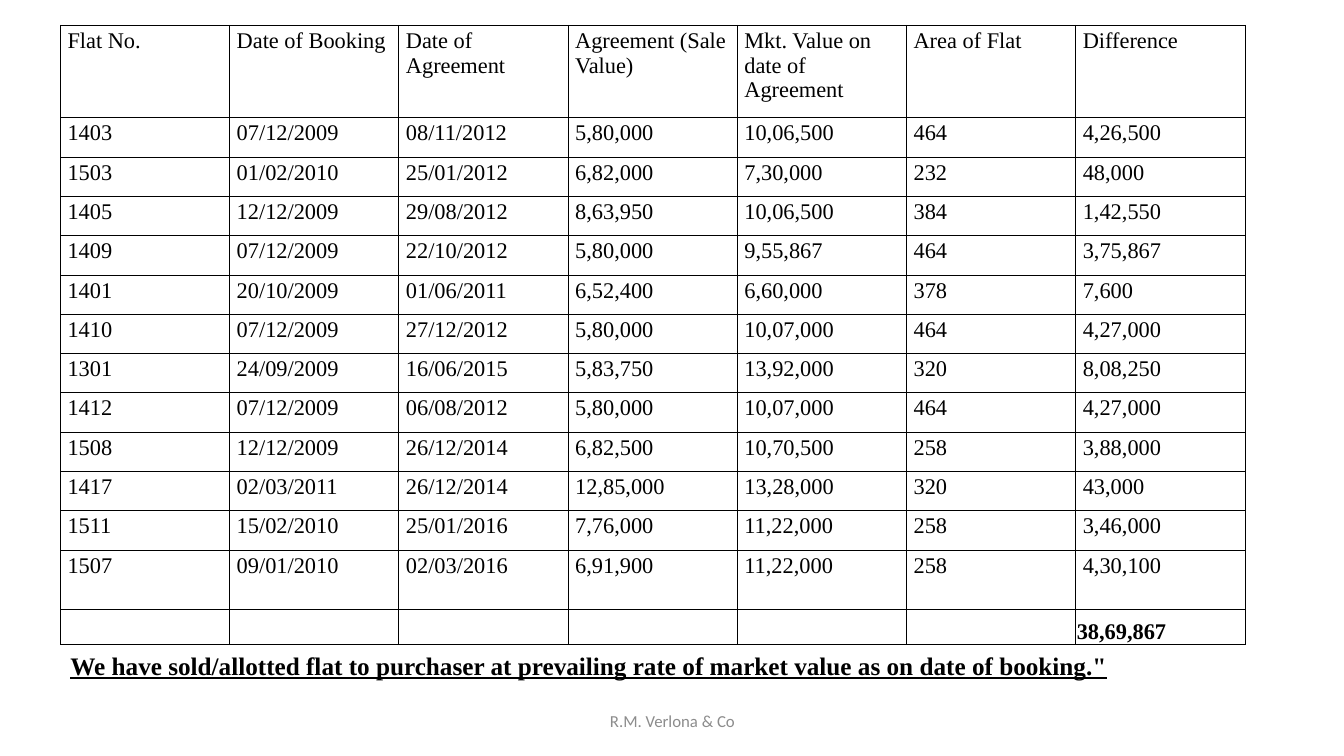
"""Build the slide listing flat sales, their market values and the differences."""
from dataclasses import dataclass

import pptx
import pptx.dml.color
import pptx.enum.text
import pptx.oxml
import pptx.oxml.ns
import pptx.util
from pptx.util import Inches


@dataclass(frozen=True)
class Theme:
    ink: str = "000000"
    paper: str = "FFFFFF"
    muted: str = "8C8C8C"
    body_font: str = "Times New Roman"
    footer_font: str = "Calibri"
    table_size: int = 16
    remark_size: int = 18
    footer_size: int = 12
    border_width: float = 0.75


theme = Theme()


def style(paragraph, face, size, color, bold=False, underline=False):
    """Set the font of a whole paragraph."""
    font = paragraph.font
    font.name, font.size = face, pptx.util.Pt(size)
    font.bold, font.underline = bold, underline
    font.color.rgb = pptx.dml.color.RGBColor.from_string(color)


def add_borders(cell):
    """Draw a thin line on all four sides of a cell."""
    width = int(pptx.util.Pt(theme.border_width))
    for side in ("lnL", "lnR", "lnT", "lnB"):
        cell._tc.get_or_add_tcPr().append(pptx.oxml.parse_xml(
            f'<a:{side} {pptx.oxml.ns.nsdecls("a")} w="{width}"><a:solidFill>'
            f'<a:srgbClr val="{theme.ink}"/></a:solidFill></a:{side}>'))


sales = [
    ["Flat No.", "Date of Booking", "Date of Agreement", "Agreement (Sale Value)",
     "Mkt. Value on date of Agreement", "Area of Flat", "Difference"],
    ["1403", "07/12/2009", "08/11/2012", "5,80,000", "10,06,500", "464", "4,26,500"],
    ["1503", "01/02/2010", "25/01/2012", "6,82,000", "7,30,000", "232", "48,000"],
    ["1405", "12/12/2009", "29/08/2012", "8,63,950", "10,06,500", "384", "1,42,550"],
    ["1409", "07/12/2009", "22/10/2012", "5,80,000", "9,55,867", "464", "3,75,867"],
    ["1401", "20/10/2009", "01/06/2011", "6,52,400", "6,60,000", "378", "7,600"],
    ["1410", "07/12/2009", "27/12/2012", "5,80,000", "10,07,000", "464", "4,27,000"],
    ["1301", "24/09/2009", "16/06/2015", "5,83,750", "13,92,000", "320", "8,08,250"],
    ["1412", "07/12/2009", "06/08/2012", "5,80,000", "10,07,000", "464", "4,27,000"],
    ["1508", "12/12/2009", "26/12/2014", "6,82,500", "10,70,500", "258", "3,88,000"],
    ["1417", "02/03/2011", "26/12/2014", "12,85,000", "13,28,000", "320", "43,000"],
    ["1511", "15/02/2010", "25/01/2016", "7,76,000", "11,22,000", "258", "3,46,000"],
    ["1507", "09/01/2010", "02/03/2016", "6,91,900", "11,22,000", "258", "4,30,100"],
    ["", "", "", "", "", "", "38,69,867"],
]
row_heights = [0.92] + [0.39] * 11 + [0.59, 0.35]
total_row = len(sales) - 1

deck = pptx.Presentation()
deck.slide_width, deck.slide_height = Inches(13.33), Inches(7.5)
slide = deck.slides.add_slide(deck.slide_layouts[6])

register = slide.shapes.add_table(
    len(sales), len(sales[0]),
    Inches(0.6), Inches(0.25), Inches(11.75), Inches(6.15)).table
register.first_row = register.horz_banding = False

for row, (entries, height) in enumerate(zip(sales, row_heights)):
    register.rows[row].height = Inches(height)
    is_total = row == total_row
    for column, entry in enumerate(entries):
        cell = register.cell(row, column)
        add_borders(cell)
        cell.fill.solid()
        cell.fill.fore_color.rgb = pptx.dml.color.RGBColor.from_string(theme.paper)
        cell.margin_left = cell.margin_right = Inches(0.01 if is_total else 0.07)
        cell.margin_top = Inches(0.01 if is_total else 0.03)
        cell.margin_bottom = Inches(0 if is_total else 0.03)
        if is_total:
            cell.vertical_anchor = pptx.enum.text.MSO_ANCHOR.BOTTOM
        cell.text = entry
        style(cell.text_frame.paragraphs[0], theme.body_font, theme.table_size,
              theme.ink, bold=is_total)

remark = slide.shapes.add_textbox(
    Inches(0.6), Inches(6.4), Inches(11.55), Inches(0.4)).text_frame
remark.word_wrap = True
remark.auto_size = pptx.enum.text.MSO_AUTO_SIZE.SHAPE_TO_FIT_TEXT
remark.text = ("We have sold/allotted flat to purchaser at prevailing rate of "
               'market value as on date of booking."')
style(remark.paragraphs[0], theme.body_font, theme.remark_size, theme.ink,
      bold=True, underline=True)

footer = slide.shapes.add_textbox(
    Inches(4.42), Inches(6.95), Inches(4.5), Inches(0.4)).text_frame
footer.word_wrap = True
footer.vertical_anchor = pptx.enum.text.MSO_ANCHOR.MIDDLE
footer.text = "R.M. Verlona & Co"
footer.paragraphs[0].alignment = pptx.enum.text.PP_ALIGN.CENTER
style(footer.paragraphs[0], theme.footer_font, theme.footer_size, theme.muted)

deck.save("out.pptx")
